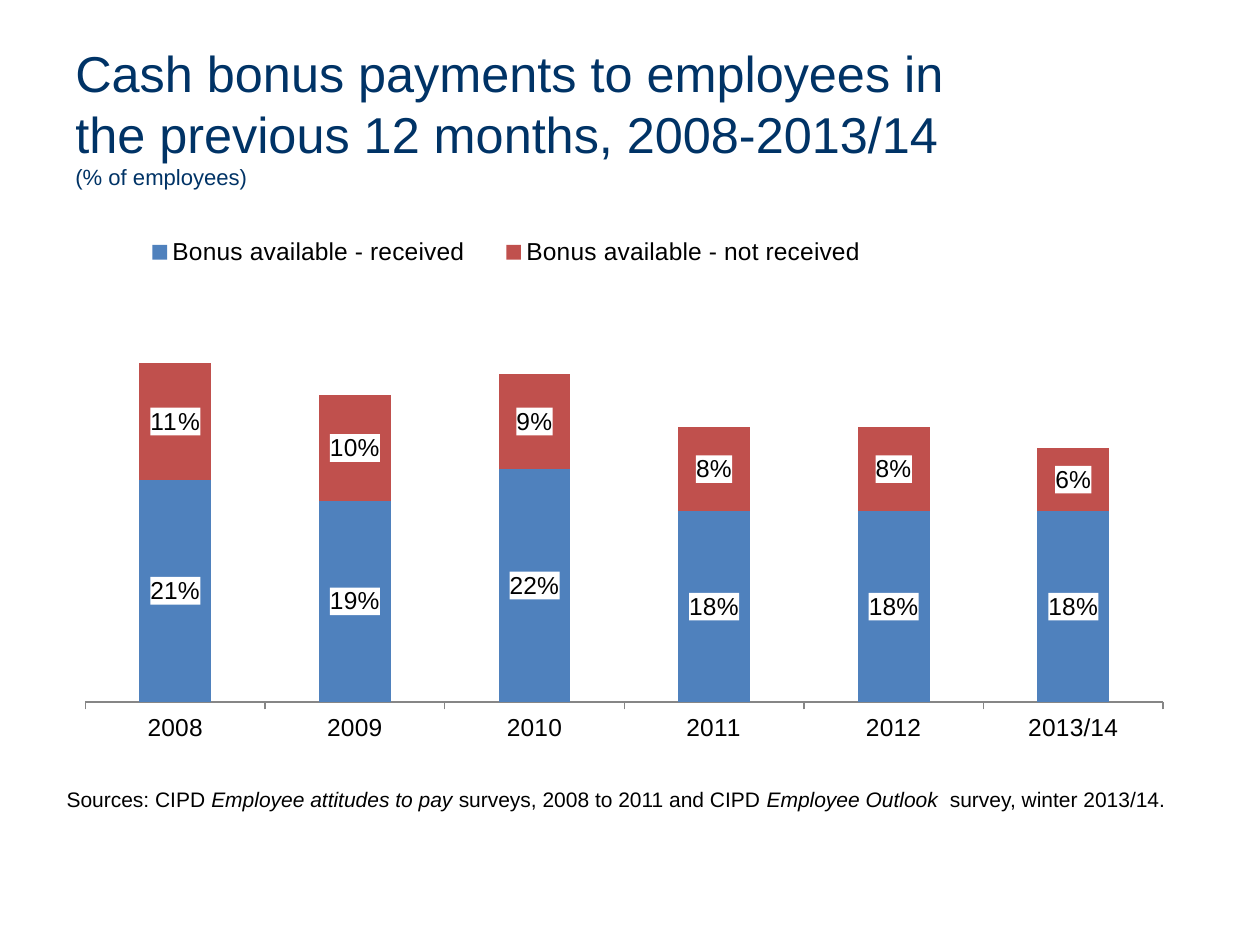
"""Build a slide with a stacked column chart of cash bonus payments."""
from lxml import etree
from pptx import Presentation
from pptx.chart import data
from pptx.dml.color import RGBColor
from pptx.enum import chart as charts, text
from pptx.oxml import parse_xml
from pptx.oxml.ns import nsdecls, qn
from pptx.util import Inches, Pt

NAVY = RGBColor(0x00, 0x33, 0x66)
BLACK = RGBColor(0x00, 0x00, 0x00)
BLUE = RGBColor(0x4F, 0x81, 0xBD)
RED = RGBColor(0xC0, 0x50, 0x4D)
GREY = RGBColor(0x86, 0x86, 0x86)


def set_layout(element, x, y, width, height, inner=False):
    layout = element.find(qn("c:layout"))
    if layout is None:
        layout = etree.Element(qn("c:layout"))
        position = element.find(qn("c:legendPos"))
        if position is None:
            element.insert(0, layout)
        else:
            position.addnext(layout)
    manual = etree.SubElement(layout, qn("c:manualLayout"))
    settings = [("layoutTarget", "inner")] if inner else []
    settings += [("xMode", "edge"), ("yMode", "edge"),
                 ("x", x), ("y", y), ("w", width), ("h", height)]
    for tag, value in settings:
        etree.SubElement(manual, qn(f"c:{tag}")).set("val", str(value))


def add_text_box(slide, left, top, width, height, anchor):
    frame = slide.shapes.add_textbox(
        Inches(left), Inches(top), Inches(width), Inches(height)).text_frame
    frame.word_wrap = True
    frame.vertical_anchor = anchor
    return frame.paragraphs[0]


presentation = Presentation()
presentation.slide_width = Inches(10)
presentation.slide_height = Inches(7.5)
slide = presentation.slides.add_slide(presentation.slide_layouts[6])

title = add_text_box(slide, 0.5, 0.3, 7.73, 1.24, text.MSO_ANCHOR.MIDDLE)
title.font.name = "Arial"
title.font.color.rgb = NAVY
heading = title.add_run()
heading.text = "Cash bonus payments to employees in the previous 12 months, 2008-2013/14"
heading.font.size = Pt(28.8)
title.add_line_break()
unit = title.add_run()
unit.text = "(% of employees)"
unit.font.size = Pt(12.6)

chart_data = data.CategoryChartData(number_format="0%")
chart_data.categories = ["2008", "2009", "2010", "2011", "2012", "2013/14"]
chart_data.add_series("Bonus available - received",
                      [0.21, 0.19, 0.22, 0.18, 0.18, 0.18])
chart_data.add_series("Bonus available - not received",
                      [0.11, 0.1, 0.09, 0.08, 0.08, 0.06])
chart = slide.shapes.add_chart(
    charts.XL_CHART_TYPE.COLUMN_STACKED, Inches(0.5), Inches(1.75),
    Inches(8.91), Inches(4.2), chart_data).chart
chart.has_title = False
chart.font.name = "Arial"
chart.font.size = Pt(14)
chart.font.color.rgb = BLACK

chart.has_legend = True
chart.legend.position = charts.XL_LEGEND_POSITION.TOP
chart.legend.include_in_layout = False
set_layout(chart.legend._element, 0.05, 0.02, 0.69, 0.08)
set_layout(chart._chartSpace.chart.plotArea, 0.02, 0.11, 0.96, 0.8, inner=True)

category_axis = chart.category_axis
category_axis.tick_label_position = charts.XL_TICK_LABEL_POSITION.LOW
category_axis.major_tick_mark = charts.XL_TICK_MARK.OUTSIDE
category_axis.format.line.color.rgb = GREY
value_axis = chart.value_axis
value_axis.minimum_scale = 0
value_axis.maximum_scale = 0.4
value_axis.has_major_gridlines = False
value_axis.visible = False

plot = chart.plots[0]
plot.gap_width = 150
plot.overlap = 100
plot.vary_by_categories = False
for series, color in zip(plot.series, (BLUE, RED)):
    series.format.fill.solid()
    series.format.fill.fore_color.rgb = color
    labels = series.data_labels
    labels.show_value = True
    labels.number_format = "0%"
    labels.number_format_is_linked = False
    labels.position = charts.XL_LABEL_POSITION.CENTER
    labels._element.find(qn("c:numFmt")).addnext(parse_xml(
        f'<c:spPr {nsdecls("c", "a")}><a:solidFill><a:srgbClr val="FFFFFF"/>'
        '</a:solidFill></c:spPr>'))

sources = add_text_box(slide, 0.43, 6.19, 8.98, 0.3, text.MSO_ANCHOR.TOP)
sources.font.name = "Arial"
sources.font.size = Pt(12)
sources.font.color.rgb = BLACK
for wording, italic in [
    ("Sources: CIPD ", False),
    ("Employee attitudes to pay ", True),
    ("surveys, 2008 to 2011 and CIPD ", False),
    ("Employee Outlook ", True),
    (" survey, winter 2013/14.", False),
]:
    run = sources.add_run()
    run.text = wording
    run.font.italic = italic

presentation.save("out.pptx")
